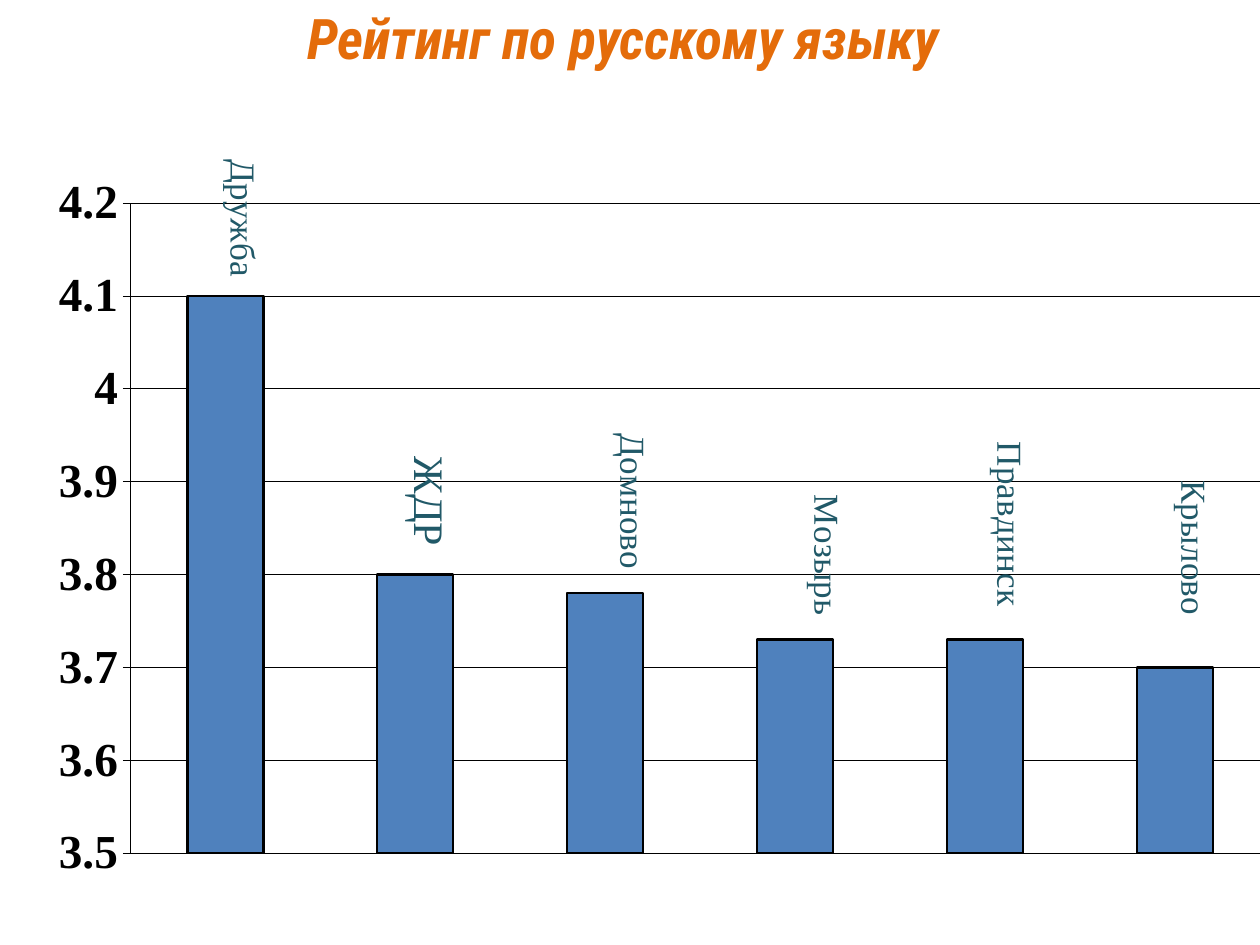
from dataclasses import dataclass

import lxml.etree
import pptx
import pptx.chart.data
import pptx.dml.color
import pptx.enum.chart
import pptx.enum.text
import pptx.oxml
import pptx.oxml.ns
import pptx.util
from pptx.util import Cm, Pt

ORANGE = pptx.dml.color.RGBColor(0xE4, 0x6C, 0x0A)
BLUE = pptx.dml.color.RGBColor(0x4F, 0x81, 0xBD)
TEAL = pptx.dml.color.RGBColor(0x21, 0x59, 0x68)
BLACK = pptx.dml.color.RGBColor(0, 0, 0)
TITLE_FONT = "Roboto Condensed"
CHART_FONT = "Times New Roman"
CHART_WIDTH, CHART_HEIGHT = 45.31, 29.39  # centimetres
LABEL_EXTENSION = (
    '<c:extLst xmlns:c="http://schemas.openxmlformats.org/drawingml/2006/chart">'
    '<c:ext uri="{CE6537A1-D6FC-4f65-9D91-7224C49458BB}"'
    ' xmlns:c15="http://schemas.microsoft.com/office/drawing/2012/chart">'
    '<c15:showLeaderLines val="0"/></c:ext></c:extLst>'
)


@dataclass(frozen=True)
class School:
    name: str
    rating: float
    label_right: float  # label shift in centimetres
    label_up: float
    label_size: float = 20


SCHOOLS = [
    School("Дружба", 4.1, 0.35, 0.28),
    School("ЖДР", 3.8, 0.27, 0.47, 24),
    School("Домново", 3.78, 0.55, 0.38),
    School("Мозырь", 3.73, 0.63, 0.38),
    School("Правдинск", 3.73, 0.49, 0.57),
    School("Крылово", 3.7, 0.37, 0.95),
]


def set_font(font, *, name: str, size: float, color, bold=False, italic=False) -> None:
    font.name, font.size = name, Pt(size)
    font.bold, font.italic = bold, italic
    font.color.rgb = color


def add_text(slide, text: str, *, left, top, width, height, **font_format) -> None:
    frame = slide.shapes.add_textbox(left, top, width, height).text_frame
    frame.word_wrap = True
    frame.margin_top = frame.margin_bottom = 0
    frame.vertical_anchor = pptx.enum.text.MSO_ANCHOR.MIDDLE
    paragraph = frame.paragraphs[0]
    paragraph.alignment = pptx.enum.text.PP_ALIGN.CENTER
    run = paragraph.add_run()
    run.text = text
    set_font(run.font, **font_format)


def set_line(line, width: float) -> None:
    line.color.rgb = BLACK
    line.width = Pt(width)


def add_layout(parent, position: int, **values) -> None:
    """Insert a manual chart layout; values keep their schema order."""
    qn = pptx.oxml.ns.qn
    for old in parent.findall(qn("c:layout")):
        parent.remove(old)
    layout = lxml.etree.Element(qn("c:layout"))
    manual = lxml.etree.SubElement(layout, qn("c:manualLayout"))
    for tag, value in values.items():
        lxml.etree.SubElement(manual, qn(f"c:{tag}")).set("val", str(value))
    parent.insert(position, layout)


def label_point(series, index: int, school: School) -> None:
    """Show the category name, turned a quarter, above one column."""
    qn = pptx.oxml.ns.qn
    label = series.points[index].data_label
    set_font(label.font, name=CHART_FONT, size=school.label_size, color=TEAL)
    label.position = pptx.enum.chart.XL_LABEL_POSITION.OUTSIDE_END
    element = series.data_labels._element.findall(qn("c:dLbl"))[index]
    element.find(qn("c:showVal")).set("val", "0")
    element.find(qn("c:showCatName")).set("val", "1")
    body = element.find(qn("c:txPr")).find(qn("a:bodyPr"))
    body.set("rot", "5400000")
    body.set("vert", "horz")
    add_layout(element, 1, x=round(school.label_right / CHART_WIDTH, 4),
               y=round(-school.label_up / CHART_HEIGHT, 4))


def hide_leader_lines(series) -> None:
    """Keep shifted labels free of lines back to their columns."""
    labels = series.data_labels._element
    for leader in labels.findall(pptx.oxml.ns.qn("c:showLeaderLines")):
        leader.set("val", "0")
    labels.append(pptx.oxml.parse_xml(LABEL_EXTENSION))


def add_rating_chart(slide) -> None:
    data = pptx.chart.data.CategoryChartData()
    data.categories = [school.name for school in SCHOOLS]
    data.add_series("", [school.rating for school in SCHOOLS])
    chart = slide.shapes.add_chart(
        pptx.enum.chart.XL_CHART_TYPE.COLUMN_CLUSTERED,
        Cm(-10.06), Cm(-3.43), Cm(CHART_WIDTH), Cm(CHART_HEIGHT), data).chart
    chart.has_title = chart.has_legend = False
    set_font(chart.font, name=CHART_FONT, size=26.3, color=BLACK, bold=True)
    add_layout(chart._chartSpace.chart.plotArea, 0, layoutTarget="inner",
               xMode="edge", yMode="edge", x=0.28, y=0.256, w=0.507, h=0.446)

    # Axes
    chart.category_axis.visible = False
    axis = chart.value_axis
    axis.minimum_scale, axis.maximum_scale, axis.major_unit = 3.5, 4.2, 0.1
    axis.major_tick_mark = pptx.enum.chart.XL_TICK_MARK.OUTSIDE
    axis.has_major_gridlines = True
    set_font(axis.tick_labels.font, name=CHART_FONT, size=27, color=BLACK, bold=True)
    set_line(axis.format.line, 0.37)
    set_line(axis.major_gridlines.format.line, 0.37)

    # Columns and their labels
    plot = chart.plots[0]
    plot.gap_width = 150
    plot.vary_by_categories = False
    series = plot.series[0]
    series.format.fill.solid()
    series.format.fill.fore_color.rgb = BLUE
    set_line(series.format.line, 1.46)
    for index, school in enumerate(SCHOOLS):
        label_point(series, index, school)
    hide_leader_lines(series)


def main() -> None:
    presentation = pptx.Presentation()
    presentation.slide_width, presentation.slide_height = Cm(25.4), Cm(19.05)
    slide = presentation.slides.add_slide(presentation.slide_layouts[6])
    add_text(slide, "Рейтинг по русскому языку", left=Cm(1.57), top=Cm(0.09),
             width=Cm(22), height=Cm(1.3), name=TITLE_FONT, size=32,
             color=ORANGE, bold=True, italic=True)
    add_rating_chart(slide)
    presentation.save("out.pptx")


if __name__ == "__main__":
    main()
